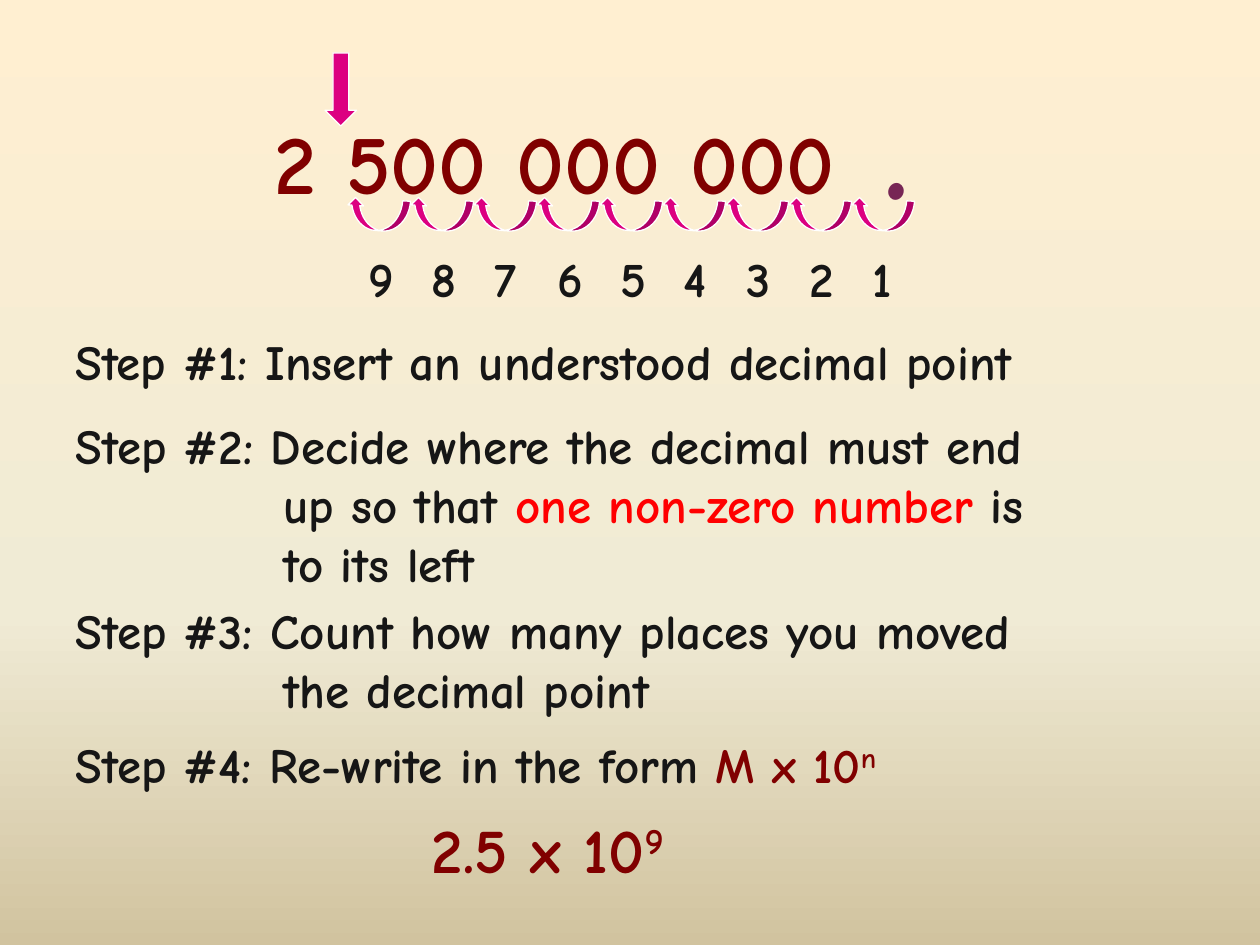
from copy import deepcopy

from pptx import Presentation
from pptx.dml.color import RGBColor
from pptx.enum.shapes import MSO_SHAPE
from pptx.oxml.ns import qn
from pptx.util import Inches, Pt

DOWN = MSO_SHAPE.DOWN_ARROW
CURVE = MSO_SHAPE.CURVED_DOWN_ARROW
INK = RGBColor(0x16, 0x16, 0x16)
MAROON = RGBColor(0x80, 0x00, 0x00)
PLUM = RGBColor(0x77, 0x26, 0x55)
RED = RGBColor(0xFF, 0x00, 0x00)
PINK = RGBColor(0xDC, 0x00, 0x81)
WHITE = RGBColor(0xFF, 0xFF, 0xFF)
CREAM = RGBColor(0xFF, 0xEF, 0xD1)
SAND = RGBColor(0xF0, 0xEB, 0xD5)
TAN = RGBColor(0xD1, 0xC3, 0x9F)
FONT = "Comic Neue"

prs = Presentation()
prs.slide_width, prs.slide_height = Inches(10), Inches(7.5)
slide = prs.slides.add_slide(prs.slide_layouts[6])
shapes = slide.shapes


def add_text(left, top, width, height, *lines, size=28):
    """Each line is a list of (text, colour) runs; later lines are indented."""
    box = shapes.add_textbox(Inches(left), Inches(top), Inches(width), Inches(height))
    frame = box.text_frame
    frame.word_wrap = True
    for i, line in enumerate(lines):
        para = frame.add_paragraph() if i else frame.paragraphs[0]
        if i:
            para._p.get_or_add_pPr().set("marL", str(Inches(1.65)))
        for text, color in line:
            run = para.add_run()
            run.text = text
            run.font.name = FONT
            run.font.size = Pt(size)
            run.font.bold = True
            run.font.color.rgb = color
    return frame


def add_arrow(kind, left, top, width, height):
    arrow = shapes.add_shape(kind, Inches(left), Inches(top), Inches(width), Inches(height))
    arrow.shadow.inherit = False
    arrow.fill.solid()
    arrow.fill.fore_color.rgb = PINK
    arrow.line.color.rgb = WHITE
    arrow.line.width = Pt(0.75)
    return arrow


# Background gradient, top to bottom
fill = slide.background.fill
fill.gradient()
fill.gradient_angle = 270
stops = slide.element.find(".//" + qn("a:gsLst"))
stops.append(deepcopy(stops[-1]))
for node, stop, (pos, color) in zip(
    stops, fill.gradient_stops, [(0, CREAM), (65, SAND), (100, TAN)]
):
    node.set("pos", str(pos * 1000))
    stop.color.rgb = color

# Number with its decimal point and the target arrow
add_text(2.08, 0.83, 6.02, 0.9, [("2 500 000 000", MAROON)], size=48)
add_text(6.92, 0.42, 0.67, 1.43, [(".", PLUM)], size=80)
add_arrow(DOWN, 2.58, 0.42, 0.25, 0.58)

# Nine hops, counted from right to left
for hop in range(1, 10):
    left = 7.25 - 0.5 * hop
    add_arrow(CURVE, left, 1.58, 0.5, 0.25).rotation = 184
    add_text(left + 0.08, 1.92, 0.42, 0.57, [(str(hop), INK)])

# Steps
add_text(0.5, 2.58, 8.77, 0.57, [("Step #1: Insert an understood decimal point", INK)])
add_text(
    0.5, 3.25, 9.08, 1.99,
    [("Step #2: Decide where the decimal must end", INK)],
    [("up so that ", INK), ("one non-zero number ", RED), ("is", INK)],
    [("to its left", INK)],
)
add_text(
    0.5, 4.72, 9.08, 1.03,
    [("Step #3: Count how many places you moved", INK)],
    [("the decimal point", INK)],
)
form = add_text(
    0.5, 5.78, 9.08, 0.57,
    [("Step #4: Re-write in the form ", INK), ("M x 10", MAROON), ("n", MAROON)],
)

# Result
result = add_text(3.33, 6.38, 2.8, 0.71, [("2.5 x 10", MAROON), ("9", MAROON)], size=36)

# Raise the exponents
for frame in (form, result):
    power = frame.paragraphs[0].runs[-1]
    power._r.get_or_add_rPr().set("baseline", "30000")

prs.save("out.pptx")
